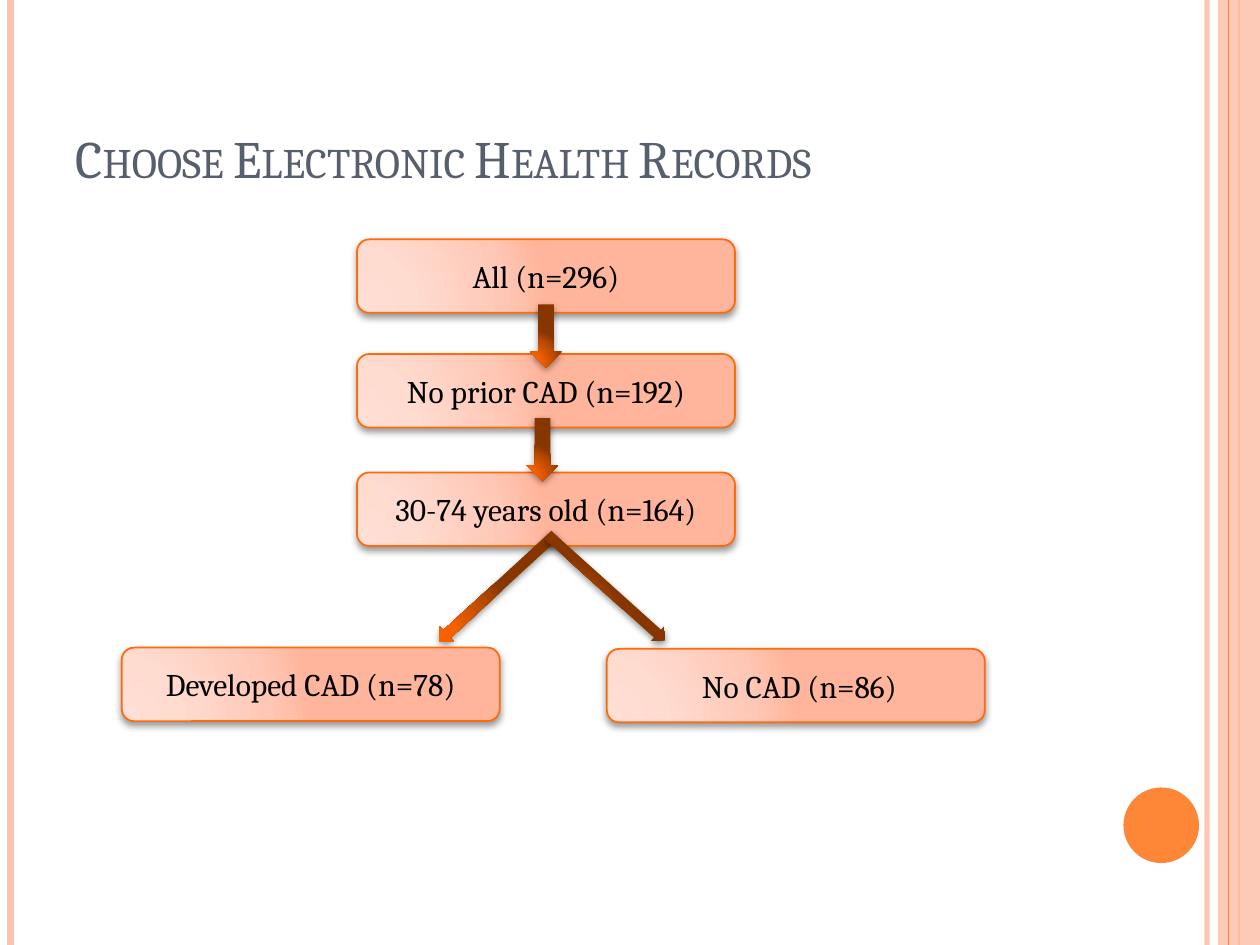
"""Build the slide showing how electronic health records were chosen."""
from pptx import Presentation
from pptx.dml.color import RGBColor
from pptx.enum.shapes import MSO_CONNECTOR, MSO_SHAPE
from pptx.enum.text import MSO_ANCHOR, PP_ALIGN
from pptx.oxml import parse_xml
from pptx.oxml.ns import nsdecls
from pptx.util import Pt

WIDTH, HEIGHT = 720, 540
FONT = "Cambria"
PEACH = RGBColor(0xFE, 0xC3, 0xAE)
ORANGE = RGBColor(0xFE, 0x86, 0x37)
BORDER = RGBColor(0xFF, 0x6B, 0x0A)
SLATE = RGBColor(0x57, 0x5F, 0x6D)
BLACK = RGBColor(0, 0, 0)

STOPS = (0, 30, 75, 100)
BOX_SHADES = [RGBColor.from_string(shade) for shade in ("FFDED5", "FFDBD0", "FFC8B6", "FFB59B")]
ARROW_SHADES = [RGBColor.from_string(shade) for shade in ("FD6400", "F46100", "B74900", "873600")]

TITLE = "Choose Electronic Health Records"
BOX_SIZE = (216, 42)
UPPER_BOXES = [
    ("All (n=296)", 204, 136.8),
    ("No prior CAD (n=192)", 204, 202.3),
    ("30-74 years old (n=164)", 204, 270),
]
LOWER_BOXES = [
    ("Developed CAD (n=78)", 69.6, 370.1),
    (" No CAD (n=86)", 346.8, 370.8),
]
ARROWS = [
    (MSO_SHAPE.DOWN_ARROW, 303, 174, 18, 36, 0),
    (MSO_SHAPE.DOWN_ARROW, 301, 239, 18, 36, 0),
    (MSO_SHAPE.RIGHT_ARROW, 239, 330, 90, 12, 137.4),
    (MSO_SHAPE.RIGHT_ARROW, 301.7, 330, 90, 12, 42),
]
LINES_BEHIND_BAND = [(689.8, PEACH, 3, 93), (6, PEACH, 4.5, 100), (708, ORANGE, 1.5, 100)]
BAND = (696, 0, 24, HEIGHT)
BAND_OPACITY = 87
LINE_ON_BAND = (702, ORANGE, 0.75, 100)
DISC = (642, 450, 43.2, 43.2)


def set_opacity(element, percent):
    color = element.find(".//{*}srgbClr")
    color.append(parse_xml(f'<a:alpha {nsdecls("a")} val="{percent * 1000}"/>'))


def add_rule(page, x, color, weight, opacity):
    rule = page.shapes.add_connector(MSO_CONNECTOR.STRAIGHT, Pt(x), 0, Pt(x), Pt(HEIGHT))
    rule.line.color.rgb = color
    rule.line.width = Pt(weight)
    properties = rule._element.spPr
    if opacity < 100:
        set_opacity(properties, opacity)
    properties.append(parse_xml(f'<a:effectLst {nsdecls("a")}/>'))


def add_shape(page, kind, left, top, width, height, color=None):
    shape = page.shapes.add_shape(kind, Pt(left), Pt(top), Pt(width), Pt(height))
    shape.line.fill.background()
    shape.shadow.inherit = False
    if color is not None:
        shape.fill.solid()
        shape.fill.fore_color.rgb = color
    return shape


def add_glow(shape, shades, opacity, distance):
    stops = "".join(
        f'<a:gs pos="{stop * 1000}"><a:srgbClr val="{shade}"/></a:gs>'
        for stop, shade in zip(STOPS, shades)
    )
    gradient = parse_xml(
        f'<a:gradFill {nsdecls("a")} rotWithShape="1"><a:gsLst>{stops}</a:gsLst>'
        '<a:path path="circle"><a:fillToRect l="5000" t="100000" r="120000" b="10000"/>'
        '</a:path></a:gradFill>'
    )
    properties = shape._element.spPr
    properties.find("{*}prstGeom").addnext(gradient)
    properties.find("{*}effectLst").append(parse_xml(
        f'<a:outerShdw {nsdecls("a")} blurRad="{Pt(4)}" dist="{Pt(distance)}" dir="5400000" '
        f'rotWithShape="0"><a:srgbClr val="{BLACK}"><a:alpha val="{opacity * 1000}"/>'
        '</a:srgbClr></a:outerShdw>'
    ))


def set_text(shape, text, size, color, anchor, alignment):
    frame = shape.text_frame
    frame.word_wrap = True
    frame.vertical_anchor = anchor
    frame.text = text
    para = frame.paragraphs[0]
    para.alignment = alignment
    span = para.runs[0]
    span.font.name = FONT
    span.font.size = Pt(size)
    span.font.color.rgb = color
    return span


def add_boxes(page, boxes):
    for text, left, top in boxes:
        box = add_shape(page, MSO_SHAPE.ROUNDED_RECTANGLE, left, top, *BOX_SIZE)
        box.line.color.rgb = BORDER
        box.line.width = Pt(1)
        add_glow(box, BOX_SHADES, 40, 2)
        set_text(box, text, 18, BLACK, MSO_ANCHOR.MIDDLE, PP_ALIGN.CENTER)


def main():
    deck = Presentation()
    deck.slide_width, deck.slide_height = Pt(WIDTH), Pt(HEIGHT)
    page = deck.slides.add_slide(deck.slide_layouts[6])

    for rule in LINES_BEHIND_BAND:
        add_rule(page, *rule)
    band = add_shape(page, MSO_SHAPE.RECTANGLE, *BAND, PEACH)
    set_opacity(band._element.spPr, BAND_OPACITY)
    add_rule(page, *LINE_ON_BAND)
    add_shape(page, MSO_SHAPE.OVAL, *DISC, ORANGE)

    title = page.shapes.add_textbox(Pt(36), Pt(21.6), Pt(588), Pt(90))
    span = set_text(title, TITLE, 30, SLATE, MSO_ANCHOR.BOTTOM, PP_ALIGN.LEFT)
    span.font._element.set("cap", "small")

    add_boxes(page, UPPER_BOXES)
    for kind, left, top, width, height, angle in ARROWS:
        arrow = add_shape(page, kind, left, top, width, height)
        arrow.rotation = angle
        add_glow(arrow, ARROW_SHADES, 42, 1.6)
    add_boxes(page, LOWER_BOXES)
    deck.save("out.pptx")


if __name__ == "__main__":
    main()
